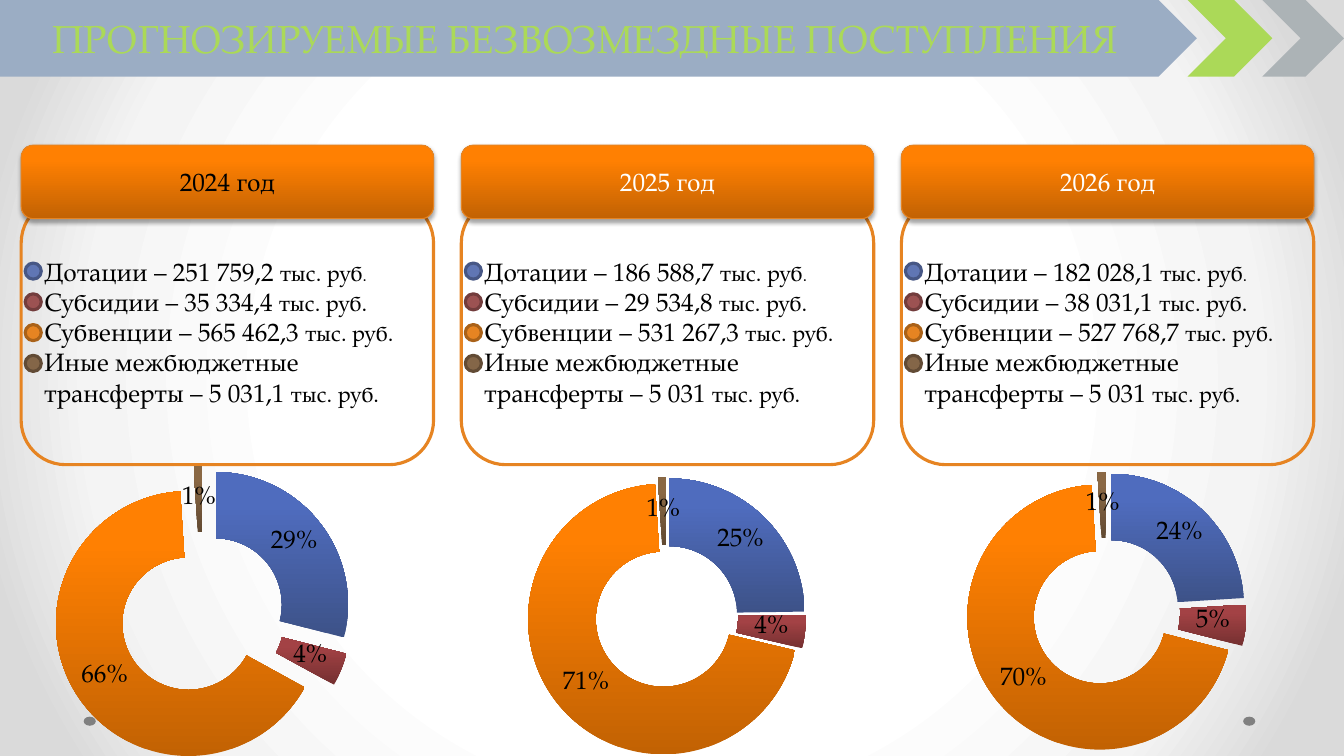
from dataclasses import dataclass

from pptx import Presentation
from pptx.chart.data import CategoryChartData
from pptx.dml.color import RGBColor
from pptx.enum.chart import XL_CHART_TYPE
from pptx.enum.shapes import MSO_SHAPE
from pptx.enum.text import MSO_ANCHOR, PP_ALIGN
from pptx.oxml import parse_xml
from pptx.oxml.ns import nsdecls, qn
from pptx.util import Inches, Pt


@dataclass(frozen=True)
class Theme:
    font: str = "TeX Gyre Pagella"
    title_size: int = 28
    text_size: int = 18
    unit_size: int = 16
    stop_size: int = 12
    black: str = "000000"
    white: str = "FFFFFF"
    ribbon: str = "9BADC4"
    green: str = "ABD958"
    silver: str = "ACB3B6"
    grey: str = "808080"
    orange: str = "E68422"
    header: tuple = ("C26203", "FF8002")
    backdrop: tuple = ((50, "FFFFFF"), (76, "F4F4F4"), (92, "DADADA"))
    # Marker fill, marker line, and the ring segment's bottom and top shades
    kinds: tuple = (
        ("6076B4", "475785", "3D5288", "4F6CBE"),
        ("9C5252", "733D3D", "753030", "A34245"),
        ("E68422", "AA6219", "C26203", "FF8002"),
        ("846648", "624B35", "624A32", "8A6844"),
    )


T = Theme()
LEFT, PITCH, CARD_W = 0.21, 4.365, 4.09
HEADER_Y, HEADER_H = 1.44, 0.73
CARD_Y, CARD_H, CARD_PAD = 1.97, 2.64, 0.13
DOT_Y, DOT_STEP, DOT = 2.61, 0.305, 0.16
RIBBON_H, CHART_Y = 0.76, 4.62
NAMES = ("Дотации", "Субсидии", "Субвенции", "Иные межбюджетные трансферты")

# Year, header colour, amounts, shares, explosion, chart (x, w, h), plot (x, y, w, h)
YEARS = (
    ("2024", T.black, ("251 759,2", "35 334,4", "565 462,3", "5 031,1"),
     (29, 4, 66, 1), 25, (0.33, 3.86, 3.25), (0.05, 0, 0.77, 0.91)),
    ("2025", T.white, ("186 588,7", "29 534,8", "531 267,3", "5 031"),
     (25, 4, 71, 1), 6, (4.76, 3.56, 2.88), (0.1, 0.04, 0.84, 0.96)),
    ("2026", T.white, ("182 028,1", "38 031,1", "527 768,7", "5 031"),
     (24, 5, 70, 1), 12, (8.94, 3.98, 2.85), (0.16, 0.02, 0.7, 0.98)),
)


def rgb(color):
    return RGBColor.from_string(color)


def add_run(p, text, size=T.text_size, color=T.black):
    r = p.add_run()
    r.text = text
    r.font.name, r.font.size, r.font.bold = T.font, Pt(size), False
    r.font.color.rgb = rgb(color)


def add_box(s, kind, x, y, w, h, fill=None, line=None, line_w=2.25):
    sp = s.shapes.add_shape(kind, Inches(x), Inches(y), Inches(w), Inches(h))
    sp.shadow.inherit = False
    if fill:
        sp.fill.solid()
        sp.fill.fore_color.rgb = rgb(fill)
    else:
        sp.fill.background()
    if line:
        sp.line.color.rgb = rgb(line)
        sp.line.width = Pt(line_w)
    else:
        sp.line.fill.background()
    return sp


def shade(fill, bottom, top):
    fill.gradient()
    fill.gradient_angle = 90
    for stop, color, position in zip(fill.gradient_stops, (bottom, top), (0, 0.8)):
        stop.color.rgb = rgb(color)
        stop.position = position


def place(s, ph, x, y, w, h, pad=0.1):
    """Move a placeholder, centre its text vertically and bring it to the front."""
    ph.left, ph.top, ph.width, ph.height = map(Inches, (x, y, w, h))
    tf = ph.text_frame
    tf.word_wrap = True
    tf.vertical_anchor = MSO_ANCHOR.MIDDLE
    tf.margin_left = tf.margin_right = Inches(pad)
    s.shapes._spTree.append(ph._element)
    return tf


def set_backdrop(s):
    s.background.fill.gradient()
    grad = s.element.find(".//" + qn("a:gradFill"))
    stops = "".join(
        f'<a:gs pos="{pos * 1000}"><a:srgbClr val="{color}"/></a:gs>'
        for pos, color in T.backdrop)
    grad.getparent().replace(grad, parse_xml(
        f'<a:gradFill {nsdecls("a")} rotWithShape="1"><a:gsLst>{stops}</a:gsLst>'
        '<a:path path="circle"><a:fillToRect l="50000" t="50000" r="50000" b="50000"/>'
        '</a:path></a:gradFill>'))


def add_title(s, text):
    add_box(s, MSO_SHAPE.PENTAGON, 0, 0, 11.87, RIBBON_H, T.ribbon)
    add_box(s, MSO_SHAPE.CHEVRON, 11.78, 0, 0.84, RIBBON_H, T.green)
    add_box(s, MSO_SHAPE.CHEVRON, 12.52, 0, 0.81, RIBBON_H, T.silver)
    p = place(s, s.shapes.title, 0, 0, 11.6, RIBBON_H).paragraphs[0]
    p.alignment = PP_ALIGN.CENTER
    add_run(p, text, size=T.title_size, color=T.green)


def add_header(s, x, text, color):
    sp = add_box(s, MSO_SHAPE.ROUNDED_RECTANGLE, x, HEADER_Y, CARD_W, HEADER_H,
                 line=T.orange, line_w=0.75)
    shade(sp.fill, *T.header)
    effects = sp._element.spPr.find(qn("a:effectLst"))
    effects.append(parse_xml(
        f'<a:outerShdw {nsdecls("a")} blurRad="{Pt(3.1)}" dist="{Pt(1.8)}" dir="5400000">'
        '<a:srgbClr val="000000"><a:alpha val="35000"/></a:srgbClr></a:outerShdw>'))
    sp.text_frame.vertical_anchor = MSO_ANCHOR.MIDDLE
    p = sp.text_frame.paragraphs[0]
    p.alignment = PP_ALIGN.CENTER
    add_run(p, text, color=color)


def add_list(s, ph, x, amounts):
    """Outline a card and list the amounts in it, each with its round marker."""
    add_box(s, MSO_SHAPE.ROUNDED_RECTANGLE, x, CARD_Y, CARD_W, CARD_H, line=T.orange)
    tf = place(s, ph, x + CARD_PAD, CARD_Y, CARD_W - 2 * CARD_PAD, CARD_H)
    for i, (name, amount) in enumerate(zip(NAMES, amounts)):
        p = tf.paragraphs[0] if i == 0 else tf.add_paragraph()
        p.space_before = p.space_after = Pt(0)
        pPr = p._p.get_or_add_pPr()
        pPr.set("marL", "0")
        pPr.set("indent", "0")
        pPr.append(parse_xml(f'<a:buNone {nsdecls("a")}/>'))
        add_run(p, f"{name} – {amount} ")
        add_run(p, "тыс. руб" if i == 0 else "тыс. руб.", size=T.unit_size)
        if i == 0:
            add_run(p, ".", size=T.stop_size)
        fill, line = T.kinds[i][:2]
        add_box(s, MSO_SHAPE.FLOWCHART_CONNECTOR, x + 0.04, DOT_Y + i * DOT_STEP,
                DOT, DOT, fill, line)


def add_ring(s, shares, explosion, frame, plot):
    data = CategoryChartData()
    data.categories = ["1", "2", "3", "4"]
    data.add_series("Series 1", shares)
    x, w, h = frame
    chart = s.shapes.add_chart(XL_CHART_TYPE.DOUGHNUT_EXPLODED, Inches(x), Inches(CHART_Y),
                               Inches(w), Inches(h), data).chart
    chart.has_legend = chart.has_title = False
    chart.font.name, chart.font.size = T.font, Pt(T.text_size)
    chart.font.color.rgb = rgb(T.black)
    ring = chart.plots[0]
    ring.vary_by_categories = True
    ring.has_data_labels = True
    labels = ring.data_labels
    labels.show_value, labels.show_percentage = True, False
    labels.number_format, labels.number_format_is_linked = '0"%"', False
    series = ring.series[0]
    for i, kind in enumerate(T.kinds):
        segment = series.points[i].format
        shade(segment.fill, *kind[2:])
        segment.line.fill.background()
    ser = series._element
    for old in ser.findall(".//" + qn("c:explosion")):
        old.getparent().remove(old)
    ser.find(qn("c:dPt")).addprevious(
        parse_xml(f'<c:explosion {nsdecls("c")} val="{explosion}"/>'))
    area = chart._chartSpace.chart.plotArea
    for old in area.findall(qn("c:layout")):
        area.remove(old)
    sides = "".join(f'<c:{tag} val="{v}"/>' for tag, v in zip("xywh", plot))
    area.insert(0, parse_xml(
        f'<c:layout {nsdecls("c")}><c:manualLayout><c:layoutTarget val="inner"/>'
        f'<c:xMode val="edge"/><c:yMode val="edge"/>{sides}</c:manualLayout></c:layout>'))


def main():
    prs = Presentation()
    prs.slide_width, prs.slide_height = Inches(13.33), Inches(7.5)
    s = prs.slides.add_slide(prs.slide_layouts[4])
    set_backdrop(s)
    *lists, spare = [ph for ph in s.placeholders if ph.placeholder_format.idx > 0]
    spare._element.getparent().remove(spare._element)
    for x in (0.83, 12.33):
        add_box(s, MSO_SHAPE.OVAL, x, 7.11, 0.12, 0.09, T.grey)
    add_title(s, "ПРОГНОЗИРУЕМЫЕ БЕЗВОЗМЕЗДНЫЕ ПОСТУПЛЕНИЯ")
    for i, (year, color, amounts, shares, explosion, frame, plot) in enumerate(YEARS):
        x = LEFT + i * PITCH
        add_list(s, lists[i], x, amounts)
        add_header(s, x, f"{year} год", color)
        add_ring(s, shares, explosion, frame, plot)
    prs.save("out.pptx")


if __name__ == "__main__":
    main()
